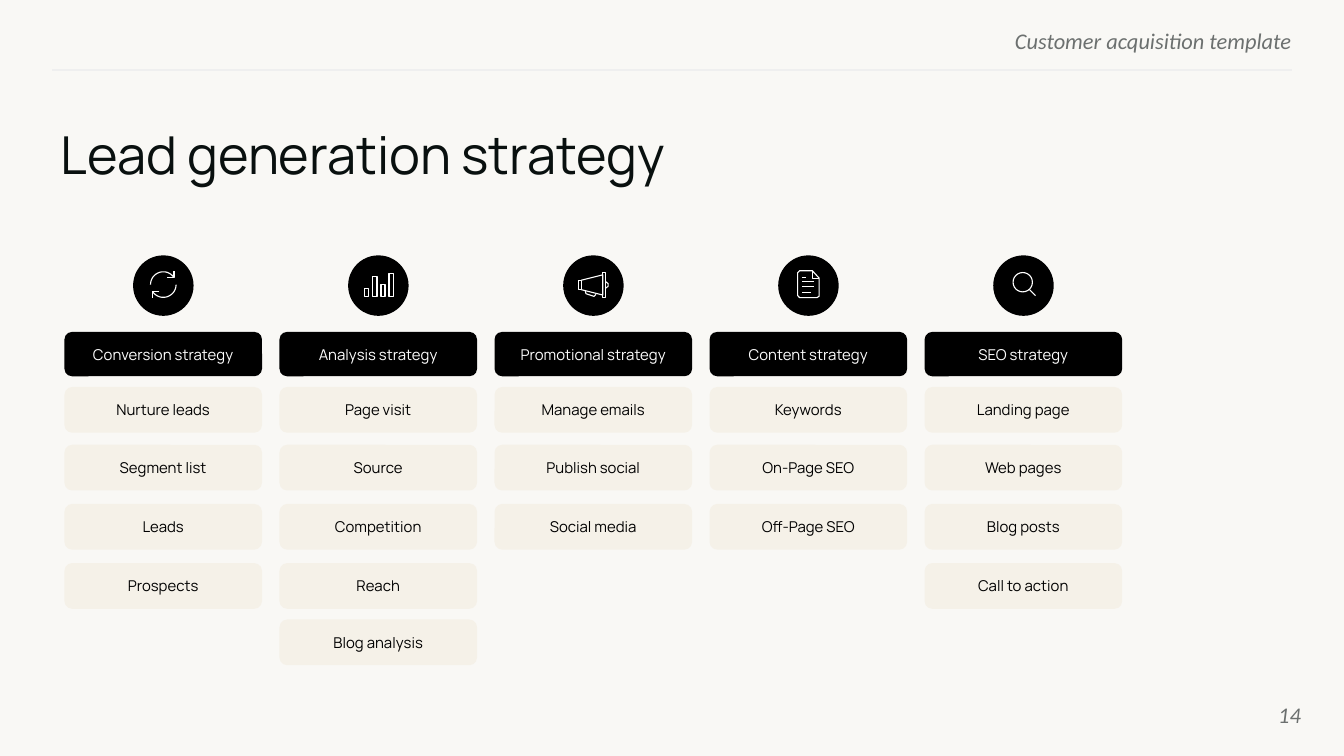
from dataclasses import dataclass
from math import cos, radians, sin

from pptx import Presentation
from pptx import util as u
from pptx.dml.color import RGBColor
from pptx.enum import shapes, text
from pptx.oxml.ns import qn
from lxml import etree


@dataclass(frozen=True)
class Theme:
    page: str = "F9F8F5"
    ink: str = "09100F"
    dark: str = "000000"
    light: str = "FFFFFF"
    sand: str = "F5F1E8"
    mute: str = "6C706F"
    rule: str = "EFEFEF"
    head: str = "Manrope"
    note: str = "Calibri"
    big: int = 28
    mid: int = 12
    small: int = 8


T = Theme()
LEFT, STEP, WIDE = 0.48, 1.6, 1.47
ROWS = (2.88, 3.31, 3.75, 4.19, 4.61)
TOP, DISC = 1.9, 0.45


def box(x, y, w, h):
    return [u.Inches(n) for n in (x, y, w, h)]


def put(obj, vals):
    for key, val in vals.items():
        setattr(obj, key, val)


def write(shape, words, font, size, color, align, anchor, pad=(0, 0), slant=False, after=0):
    frame = shape.text_frame
    frame.text = words
    side, edge = (u.Inches(n) for n in pad)
    put(frame, dict(word_wrap=True, auto_size=text.MSO_AUTO_SIZE.NONE,
                    vertical_anchor=anchor, margin_left=side, margin_right=side,
                    margin_top=edge, margin_bottom=edge))
    para = frame.paragraphs[0]
    put(para, dict(alignment=align, space_before=u.Pt(0), space_after=u.Pt(after)))
    run = para.runs[0]
    put(run.font, dict(name=font, size=u.Pt(size), italic=slant))
    run.font.color.rgb = RGBColor.from_string(color)


def add_note(slide, words, place, anchor):
    write(slide.shapes.add_textbox(*box(*place)), words, T.note, T.mid, T.mute,
          text.PP_ALIGN.RIGHT, anchor, slant=True)


def add_title(slide, words):
    title = slide.shapes.title
    put(title, dict(zip(("left", "top", "width", "height"), box(0.45, 0.91, 9.23, 0.51))))
    write(title, words, T.head, T.big, T.ink, text.PP_ALIGN.LEFT,
          text.MSO_ANCHOR.TOP, after=10)


def add_rule(slide):
    line = slide.shapes.add_connector(shapes.MSO_CONNECTOR.STRAIGHT,
                                      *box(9.61, 0.52, 0.39, 0.52))
    line.line.color.rgb = RGBColor.from_string(T.rule)
    line.line.width = u.Pt(0.75)
    etree.SubElement(line._element.spPr, qn("a:effectLst"))


def add_form(slide, kind, place, fill):
    form = slide.shapes.add_shape(kind, *box(*place))
    form.shadow.inherit = False
    form.fill.solid()
    form.fill.fore_color.rgb = RGBColor.from_string(fill)
    form.line.fill.background()
    return form


def add_pill(slide, words, place, fill, color):
    pill = add_form(slide, shapes.MSO_SHAPE.ROUNDED_RECTANGLE, place, fill)
    pill.adjustments[0] = 0.17
    write(pill, words, T.head, T.small, color, text.PP_ALIGN.CENTER,
          text.MSO_ANCHOR.MIDDLE, (0.1, 0.05))


def arc(x, y, r, start, end):
    turns = [radians(start + (end - start) * i / 24) for i in range(25)]
    return [(x + r * cos(a), y + r * sin(a)) for a in turns]


def rect(l, t, r, b):
    return [(l, t), (r, t), (r, b), (l, b), (l, t)]


def cycle():
    return [arc(0, -0.75, 9.5, 180, 325), [(3, -6), (8, -6), (8, -11)],
            arc(0, -0.75, 9.5, 0, 145), [(-3, 4.5), (-8, 4.5), (-8, 9.5)]]


def bars():
    return [rect(-10 + 6 * i, top, -7 + 6 * i, 8) for i, top in enumerate((2, -7, -1, -9))]


def horn():
    return [rect(-11, -4, -9, 3), rect(7, -10, 9, 9),
            [(-9, -4), (7, -8), (7, 7), (-9, 3)],
            [(9, -3), (11, -1.5), (11, 0.5), (9, 2)],
            [(-6, 4), (-5.5, 6), (0.5, 8), (2, 6.5)]]


def sheet():
    edge = [(-6.5, -11), (3, -11), (8, -5.5), (8, 8), (6.5, 9), (-6.5, 9),
            (-8, 7.5), (-8, -9.5), (-6.5, -11)]
    rows = [[(-4.5, y), (x, y)] for x, y in ((-1.5, -6), (4.5, -3), (4.5, 1), (2, 5))]
    return [edge, [(3, -11), (3, -5), (8, -5)], *rows]


def lens():
    return [arc(-0.5, -2.5, 7.2, 0, 360), [(4.5, 3), (9, 7.5)]]


def add_icon(slide, mid, draw):
    add_form(slide, shapes.MSO_SHAPE.OVAL, (mid - DISC / 2, TOP, DISC, DISC), T.dark)
    high = TOP + DISC / 2
    lines = [[(u.Inches(mid + x / 100), u.Inches(high + y / 100)) for x, y in line]
             for line in draw()]
    pen = slide.shapes.build_freeform(*lines[0][0])
    for i, line in enumerate(lines):
        if i:
            pen.move_to(*line[0])
        pen.add_line_segments(line[1:], close=False)
    icon = pen.convert_to_shape()
    icon.shadow.inherit = False
    icon.fill.background()
    icon.line.color.rgb = RGBColor.from_string(T.light)
    icon.line.width = u.Pt(0.6)


def add_column(slide, left, draw, head, items):
    add_icon(slide, left + WIDE / 2, draw)
    add_pill(slide, head, (left, 2.47, WIDE, 0.33), T.dark, T.light)
    for top, item in zip(ROWS, items):
        add_pill(slide, item, (left, top, WIDE, 0.34), T.sand, T.dark)


def main():
    deck = Presentation()
    wide = u.Inches(10)
    put(deck, dict(slide_width=wide, slide_height=wide * 9 // 16))
    slide = deck.slides.add_slide(deck.slide_layouts[5])
    slide.background.fill.solid()
    slide.background.fill.fore_color.rgb = RGBColor.from_string(T.page)
    add_note(slide, "Customer acquisition template", (5.76, 0.2, 3.85, 0.18),
             text.MSO_ANCHOR.TOP)
    add_rule(slide)
    add_title(slide, "Lead generation strategy")
    add_note(slide, "14", (9.08, 5.1, 0.6, 0.43), text.MSO_ANCHOR.MIDDLE)
    plans = [
        (cycle, "Conversion strategy", ["Nurture leads", "Segment list", "Leads", "Prospects"]),
        (bars, "Analysis strategy",
         ["Page visit", "Source", "Competition", "Reach", "Blog analysis"]),
        (horn, "Promotional strategy", ["Manage emails", "Publish social", "Social media"]),
        (sheet, "Content strategy", ["Keywords", "On-Page SEO", "Off-Page SEO"]),
        (lens, "SEO strategy", ["Landing page", "Web pages", "Blog posts", "Call to action"]),
    ]
    for i, plan in enumerate(plans):
        add_column(slide, LEFT + i * STEP, *plan)
    deck.save("out.pptx")


if __name__ == "__main__":
    main()
